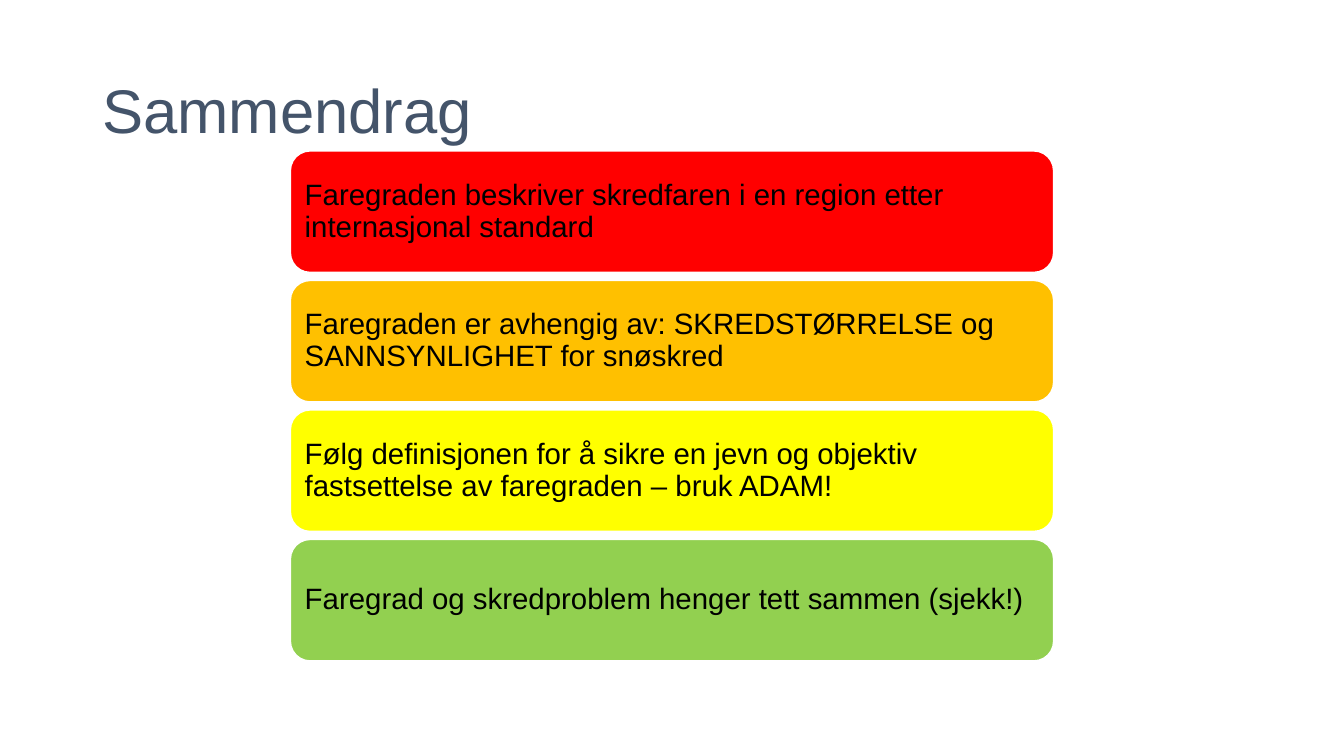
import pptx
import pptx.util
import pptx.dml.color
import pptx.enum.shapes
import pptx.enum.text

Pt = pptx.util.Pt
COLOURS = {
    "title": "44546A",
    "text": "000000",
    "outline": "FFFFFF",
    "red": "FF0000",
    "orange": "FFC000",
    "yellow": "FFFF00",
    "green": "92D050",
}


def rgb(name):
    return pptx.dml.color.RGBColor.from_string(COLOURS[name])


def write_text(shape, text, *, size, colour, side_inset, space_after=0):
    frame = shape.text_frame
    frame.word_wrap = True
    frame.vertical_anchor = pptx.enum.text.MSO_ANCHOR.MIDDLE
    frame.margin_left = frame.margin_right = Pt(side_inset)
    paragraph = frame.paragraphs[0]
    paragraph.alignment = pptx.enum.text.PP_ALIGN.LEFT
    paragraph.line_spacing = 0.9
    paragraph.space_after = Pt(space_after)
    run = paragraph.add_run()
    run.text = text
    run.font.name = "Arial"
    run.font.size = Pt(size)
    run.font.color.rgb = rgb(colour)


presentation = pptx.Presentation()
presentation.slide_width = Pt(960)
presentation.slide_height = Pt(540)
slide = presentation.slides.add_slide(presentation.slide_layouts[6])

# Title
title = slide.shapes.add_textbox(Pt(66), Pt(28.75), Pt(828), Pt(104.4))
write_text(title, "Sammendrag", size=44, colour="title", side_inset=7.2)

# Summary bars, coloured by danger level from high to low
bars = [
    ("red", "Faregraden beskriver skredfaren i en region etter internasjonal standard"),
    ("orange", "Faregraden er avhengig av: SKREDSTØRRELSE og SANNSYNLIGHET for snøskred"),
    ("yellow", "Følg definisjonen for å sikre en jevn og objektiv fastsettelse av faregraden – bruk ADAM!"),
    ("green", "Faregrad og skredproblem henger tett sammen (sjekk!)"),
]
bar_left, bar_top = 206.9, 107.3
bar_width, bar_height, bar_pitch = 546.2, 87.8, 92.5

for index, (colour, text) in enumerate(bars):
    bar = slide.shapes.add_shape(
        pptx.enum.shapes.MSO_SHAPE.ROUNDED_RECTANGLE,
        Pt(bar_left), Pt(bar_top + index * bar_pitch), Pt(bar_width), Pt(bar_height))
    bar.shadow.inherit = False
    bar.fill.solid()
    bar.fill.fore_color.rgb = rgb(colour)
    bar.line.color.rgb = rgb("outline")
    bar.line.width = Pt(2)
    write_text(bar, text, size=21, colour="text", side_inset=6.5, space_after=9)

presentation.save("out.pptx")
